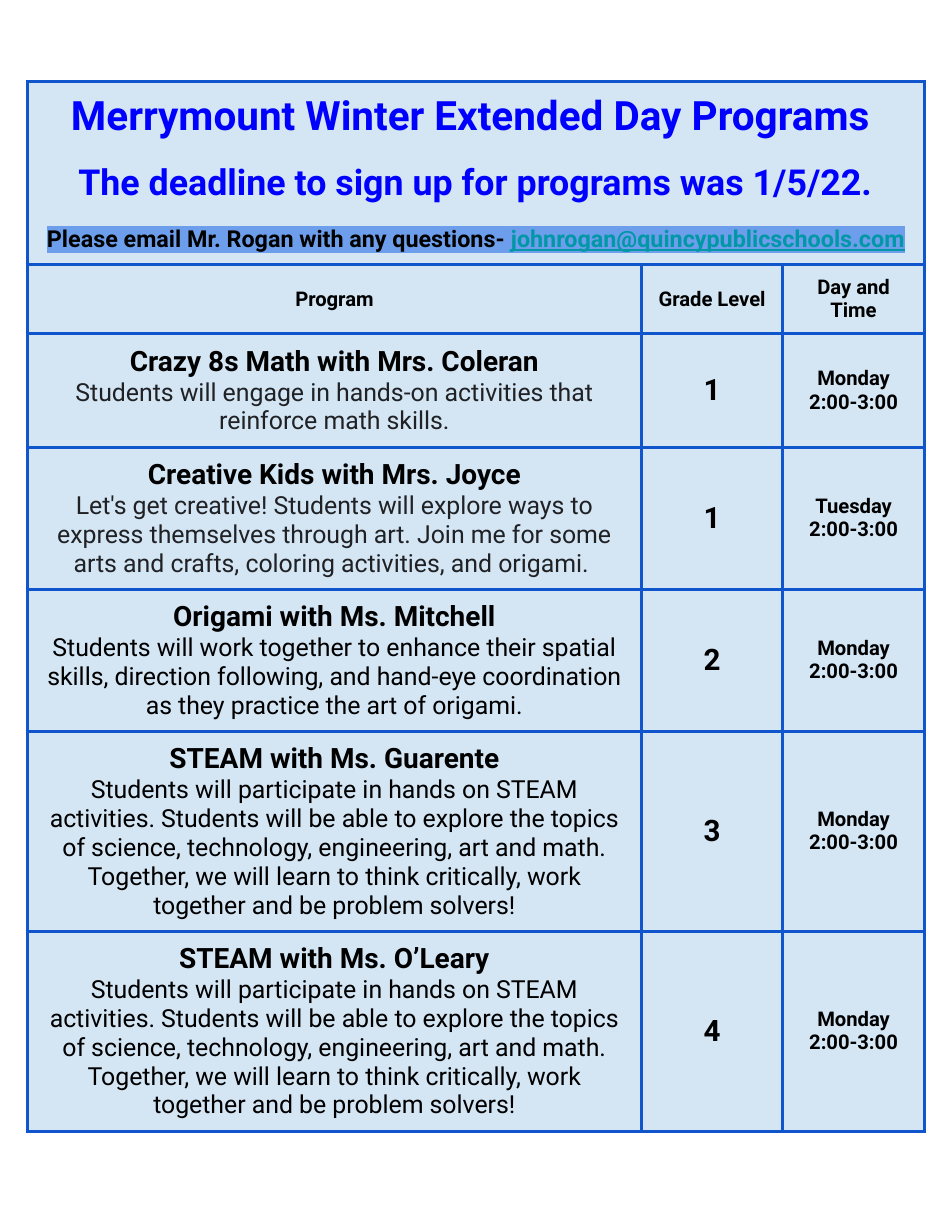
from pptx import Presentation
from pptx.dml.color import RGBColor
from pptx.enum.text import MSO_ANCHOR as ANCHOR, PP_ALIGN as ALIGN
from pptx.oxml import parse_xml
from pptx.oxml.ns import nsdecls, qn
from pptx.util import Pt


def color(hex_code):
    return RGBColor.from_string(hex_code)


class Flyer:
    """Holds the flyer's style and its current slide."""
    font = "Roboto"
    fill, alpha = "CFE2F3", 88
    border, border_width = "1155CC", 2.25
    margin = 7.2

    def __init__(self, prs):
        self.slide = prs.slides.add_slide(prs.slide_layouts[6])

    def table(self, left, top, widths, heights):
        sp = self.slide.shapes.add_table(
            len(heights), len(widths), Pt(left), Pt(top),
            Pt(sum(widths)), Pt(sum(heights)))
        table = sp.table
        table.first_row = table.horz_banding = False
        for col, width in zip(table.columns, widths):
            col.width = Pt(width)
        for row, height in zip(table.rows, heights):
            row.height = Pt(height)
        for cell in table.iter_cells():
            self.style_cell(cell)
        return table

    def style_cell(self, cell):
        cell.vertical_anchor = ANCHOR.MIDDLE
        for side in ("left", "right", "top", "bottom"):
            setattr(cell, f"margin_{side}", Pt(self.margin))
        cell.fill.solid()
        cell.fill.fore_color.rgb = color(self.fill)
        tc_pr = cell._tc.get_or_add_tcPr()
        tc_pr.find(".//" + qn("a:srgbClr")).append(parse_xml(
            f'<a:alpha {nsdecls("a")} val="{self.alpha * 1000}"/>'))
        for i, side in enumerate("LRTB"):
            tc_pr.insert(i, parse_xml(
                f'<a:ln{side} {nsdecls("a")} w="{Pt(self.border_width)}">'
                f'<a:solidFill><a:srgbClr val="{self.border}"/></a:solidFill>'
                f'</a:ln{side}>'))

    def cell_text(self, cell, *paragraphs, gap=0):
        """Each paragraph is a list of (text, format) runs."""
        tf = cell.text_frame
        for i, runs in enumerate(paragraphs):
            p = tf.add_paragraph() if i else tf.paragraphs[0]
            p.alignment = ALIGN.CENTER
            if i and gap:
                p.space_before = Pt(gap)
            for text, fmt in runs:
                self.text_run(p, text, **fmt)

    def text_run(self, p, text, rgb="000000", highlight=None, **fmt):
        r = p.add_run()
        r.text = text
        r.font.color.rgb = color(rgb)
        if highlight:
            r.font._element.find(qn("a:solidFill")).addnext(parse_xml(
                f'<a:highlight {nsdecls("a")}>'
                f'<a:srgbClr val="{highlight}"/></a:highlight>'))
        for name, value in {"name": self.font, "bold": True, **fmt}.items():
            setattr(r.font, name, value)


TITLE = {"size": Pt(26), "rgb": "0000FF"}
DEADLINE = {"size": Pt(23), "rgb": "0000FF"}
CONTACT = {"size": Pt(15), "highlight": "6D9EEB"}
EMAIL = {**CONTACT, "rgb": "0097A7", "underline": True}
LABEL = {"size": Pt(13)}
NAME = {"size": Pt(18)}
DETAIL = {"size": Pt(16), "bold": False}
GRADE = {"size": Pt(19)}

HEADINGS = ["Program", "Grade Level", "Day and Time"]
TIME = "2:00-3:00"
STEAM = ("Students will participate in hands on STEAM activities. Students will "
         "be able to explore the topics of science, technology, engineering, art "
         "and math. Together, we will learn to think critically, work together "
         "and be problem solvers!")
# Name, description, description colour, grade, day
PROGRAMS = [
    ("Crazy 8s Math with Mrs. Coleran",
     "Students will engage in hands-on activities that reinforce math skills.",
     "202124", "1", "Monday"),
    ("Creative Kids with Mrs. Joyce",
     "Let's get creative! Students will explore ways to express themselves "
     "through art. Join me for some arts and crafts, coloring activities, "
     "and origami. ",
     "202124", "1", "Tuesday"),
    ("Origami with Ms. Mitchell",
     "Students will work together to enhance their spatial skills, direction "
     "following, and hand-eye coordination as they practice the art of origami.",
     "000000", "2", "Monday"),
    ("STEAM with Ms. Guarente", STEAM, "000000", "3", "Monday"),
    ("STEAM with Ms. O’Leary", STEAM, "000000", "4", "Monday"),
]


def main():
    prs = Presentation()
    prs.slide_width, prs.slide_height = Pt(612), Pt(792)
    flyer = Flyer(prs)
    table = flyer.table(17.5, 52.5, [395, 90.5, 91.5],
                        [103, 44, 71, 90, 90, 127, 127])

    # Title band across all columns
    band = table.cell(0, 0)
    band.merge(table.cell(0, 2))
    flyer.cell_text(
        band,
        [("Merrymount Winter Extended Day Programs ", TITLE)],
        [("The deadline to sign up for programs was 1/5/22.", DEADLINE)],
        [("Please email Mr. Rogan with any questions- ", CONTACT),
         ("johnrogan@quincypublicschools.com", EMAIL)],
        gap=14)

    # Column headings
    for col, heading in enumerate(HEADINGS):
        flyer.cell_text(table.cell(1, col), [(heading, LABEL)])

    # One row per program
    for row, (name, detail, rgb, grade, day) in enumerate(PROGRAMS, start=2):
        flyer.cell_text(table.cell(row, 0), [(name, NAME)],
                        [(detail, {**DETAIL, "rgb": rgb})])
        flyer.cell_text(table.cell(row, 1), [(grade, GRADE)])
        flyer.cell_text(table.cell(row, 2), [(day, LABEL)], [(TIME, LABEL)])

    prs.save("out.pptx")


if __name__ == "__main__":
    main()
